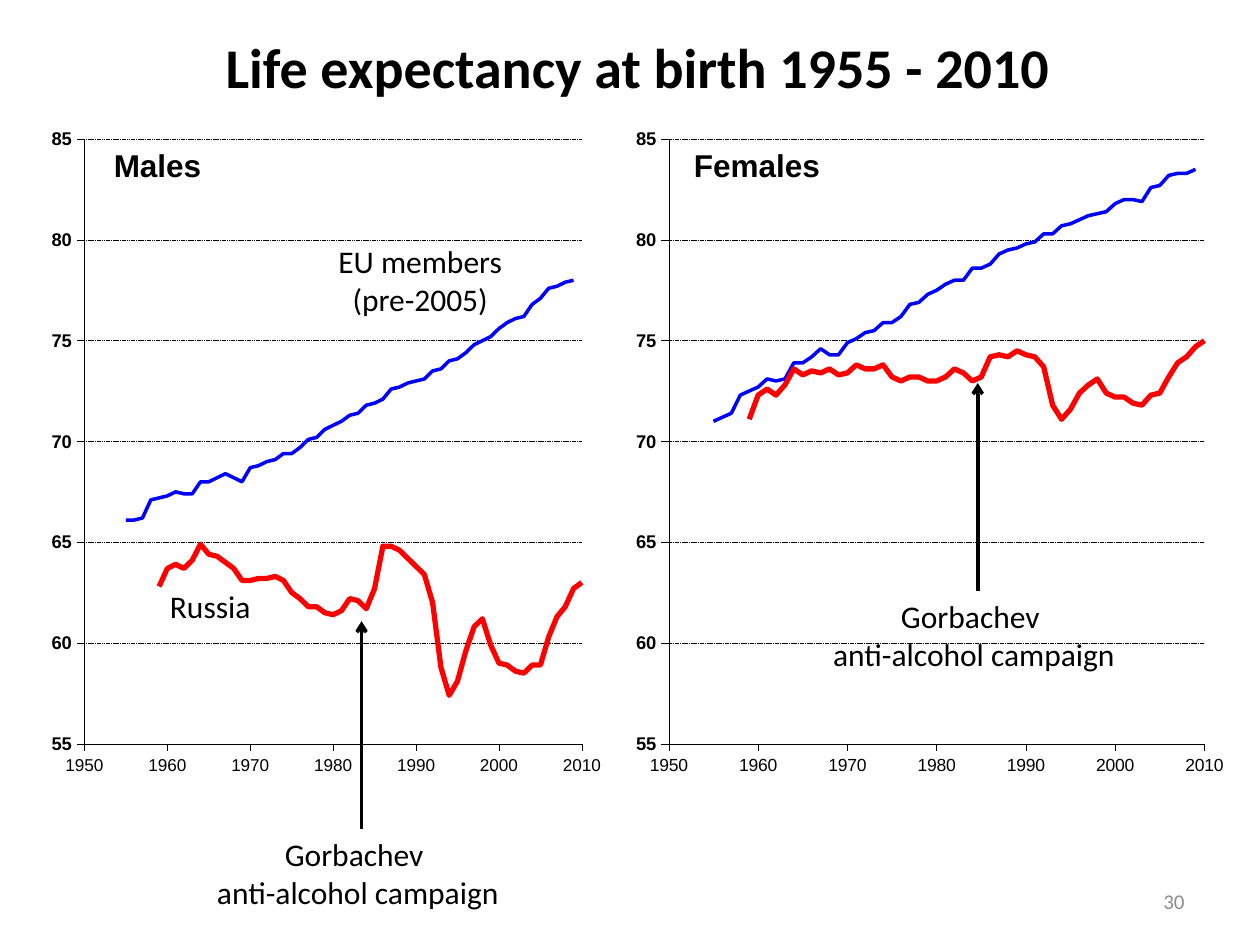
"""Build a slide comparing male and female life expectancy in Russia and the EU."""
from lxml import etree
from pptx import Presentation
from pptx.chart.data import XyChartData
from pptx.dml.color import RGBColor
from pptx.enum.chart import XL_CHART_TYPE, XL_TICK_MARK
from pptx.enum.dml import MSO_LINE
from pptx.enum.shapes import MSO_CONNECTOR
from pptx.enum.text import MSO_ANCHOR, MSO_AUTO_SIZE, PP_ALIGN
from pptx.oxml.ns import qn
from pptx.util import Inches, Pt

SCATTER = XL_CHART_TYPE.XY_SCATTER_LINES_NO_MARKERS
OUTSIDE = XL_TICK_MARK.OUTSIDE
NO_TICK = XL_TICK_MARK.NONE
DASH = MSO_LINE.SQUARE_DOT
STRAIGHT = MSO_CONNECTOR.STRAIGHT
MIDDLE, TOP = MSO_ANCHOR.MIDDLE, MSO_ANCHOR.TOP
NO_FIT = MSO_AUTO_SIZE.NONE
LEFT, CENTER, RIGHT = PP_ALIGN.LEFT, PP_ALIGN.CENTER, PP_ALIGN.RIGHT

COLORS = {"text": "000000", "number": "8C8C8C", "panel": "FFFFFF",
          "russia": "FF0000", "eu": "0000FF"}
WIDTHS = {"russia": 3, "eu": 2}
NAMES = {"russia": "Russia", "eu": "EU members"}
FIRST_YEARS = {"russia": 1959, "eu": 1955}
YEARS = range(1955, 2011)

MALES = {
    "russia": [
        62.8, 63.7, 63.9, 63.7, 64.1, 64.9, 64.4, 64.3, 64, 63.7, 63.1, 63.1, 63.2,
        63.2, 63.3, 63.1, 62.5, 62.2, 61.8, 61.8, 61.5, 61.4, 61.6, 62.2, 62.1, 61.7,
        62.7, 64.8, 64.8, 64.6, 64.2, 63.8, 63.4, 62, 58.8, 57.4, 58.1, 59.6, 60.8,
        61.2, 59.9, 59, 58.9, 58.6, 58.5, 58.9, 58.9, 60.3, 61.3, 61.8, 62.7, 63],
    "eu": [
        66.1, 66.1, 66.2, 67.1, 67.2, 67.3, 67.5, 67.4, 67.4, 68, 68, 68.2, 68.4, 68.2,
        68, 68.7, 68.8, 69, 69.1, 69.4, 69.4, 69.7, 70.1, 70.2, 70.6, 70.8, 71, 71.3,
        71.4, 71.8, 71.9, 72.1, 72.6, 72.7, 72.9, 73, 73.1, 73.5, 73.6, 74, 74.1, 74.4,
        74.8, 75, 75.2, 75.6, 75.9, 76.1, 76.2, 76.8, 77.1, 77.6, 77.7, 77.9, 78],
}
FEMALES = {
    "russia": [
        71.1, 72.3, 72.6, 72.3, 72.8, 73.6, 73.3, 73.5, 73.4, 73.6, 73.3, 73.4, 73.8,
        73.6, 73.6, 73.8, 73.2, 73, 73.2, 73.2, 73, 73, 73.2, 73.6, 73.4, 73, 73.2,
        74.2, 74.3, 74.2, 74.5, 74.3, 74.2, 73.7, 71.8, 71.1, 71.6, 72.4, 72.8, 73.1,
        72.4, 72.2, 72.2, 71.9, 71.8, 72.3, 72.4, 73.2, 73.9, 74.2, 74.7, 75],
    "eu": [
        71, 71.2, 71.4, 72.3, 72.5, 72.7, 73.1, 73, 73.1, 73.9, 73.9, 74.2, 74.6, 74.3,
        74.3, 74.9, 75.1, 75.4, 75.5, 75.9, 75.9, 76.2, 76.8, 76.9, 77.3, 77.5, 77.8,
        78, 78, 78.6, 78.6, 78.8, 79.3, 79.5, 79.6, 79.8, 79.9, 80.3, 80.3, 80.7, 80.8,
        81, 81.2, 81.3, 81.4, 81.8, 82, 82, 81.9, 82.6, 82.7, 83.2, 83.3, 83.3, 83.5],
}
CAMPAIGN = "Gorbachev \nanti-alcohol campaign"


def format_font(font, size, bold=False, color="text", name="Calibri"):
    """Set the typeface, size, weight and colour of a font."""
    font.name, font.size, font.bold = name, Pt(size), bold
    font.color.rgb = RGBColor.from_string(COLORS[color])


def format_line(line, color="text", width=0.25):
    """Set the colour and width of a line."""
    line.color.rgb = RGBColor.from_string(COLORS[color])
    line.width = Pt(width)


def write_text(text_frame, text, align=LEFT, anchor=TOP, wrap=False, **font):
    """Fill a text frame with one formatted paragraph per line of text."""
    text_frame.word_wrap = wrap
    text_frame.auto_size = NO_FIT
    text_frame.vertical_anchor = anchor
    text_frame.text = text
    for paragraph in text_frame.paragraphs:
        paragraph.alignment = align
        format_font(paragraph.runs[0].font, **font)


def add_title(slide, text, left, top, width, height):
    """Fill and place the title on a translucent panel."""
    title = slide.shapes.title
    title.left, title.top = Inches(left), Inches(top)
    title.width, title.height = Inches(width), Inches(height)
    title.fill.solid()
    title.fill.fore_color.rgb = RGBColor.from_string(COLORS["panel"])
    color = title._element.spPr.find(f".//{qn('a:srgbClr')}")
    etree.SubElement(color, qn("a:alpha"), val="80000")
    write_text(title.text_frame, text, size=32, bold=True)


def add_label(slide, text, left, top, width, height, size=18, **options):
    """Add a text box."""
    box = slide.shapes.add_textbox(*map(Inches, (left, top, width, height)))
    write_text(box.text_frame, text, size=size, **options)


def add_arrow_up(slide, x, bottom, top):
    """Add a vertical arrow that points up."""
    points = map(Inches, (x, bottom, x, top))
    connector = slide.shapes.add_connector(STRAIGHT, *points)
    format_line(connector.line, width=2)
    line = connector.line._get_or_add_ln()
    etree.SubElement(line, qn("a:tailEnd"), type="arrow")
    etree.SubElement(connector._element.spPr, qn("a:effectLst"))


def set_layout(parent, position, **values):
    """Give a chart part a manual layout in fractions of the chart."""
    layout = parent.find(qn("c:layout"))
    if layout is None:
        layout = etree.Element(qn("c:layout"))
        parent.insert(position, layout)
    manual = etree.SubElement(layout, qn("c:manualLayout"))
    for name, value in values.items():
        etree.SubElement(manual, qn(f"c:{name}"), val=str(value))


def format_axis(axis, low, high, step, size, bold=False):
    """Set the scale, ticks, labels and line of an axis."""
    axis.minimum_scale, axis.maximum_scale, axis.major_unit = low, high, step
    axis.major_tick_mark, axis.minor_tick_mark = OUTSIDE, NO_TICK
    axis.has_major_gridlines = False
    format_font(axis.tick_labels.font, size, bold, name="Arial")
    axis.tick_labels.number_format = "General"
    axis.tick_labels.number_format_is_linked = False
    format_line(axis.format.line)


def build_chart_data(groups):
    """Pair every year with a value, or None where a group has no figure."""
    data = XyChartData()
    for group, values in groups.items():
        by_year = dict(enumerate(values, FIRST_YEARS[group]))
        series = data.add_series(NAMES[group])
        for year in YEARS:
            series.add_data_point(year, by_year.get(year))
    return data


def add_life_chart(slide, heading, groups, left, width, year_size, heading_x):
    """Add a scatter chart of life expectancy by year."""
    area = map(Inches, (left, 0.94, width, 6.09))
    data = build_chart_data(groups)
    chart = slide.shapes.add_chart(SCATTER, *area, data).chart
    for point in list(chart._chartSpace.iter(qn("c:pt"))):
        if point.findtext(qn("c:v")) in ("None", ""):
            point.getparent().remove(point)
    chart.has_legend = False
    format_font(chart.font, 10.5, name="Arial")

    title = chart.chart_title
    title.text_frame.text = heading
    run = title.text_frame.paragraphs[0].runs[0]
    format_font(run.font, 18, bold=True, name="Arial")
    title._element.find(qn("c:overlay")).set("val", "1")
    set_layout(title._element, 1, xMode="edge", yMode="edge", x=heading_x, y=0.027)
    set_layout(chart._chartSpace.chart.plotArea, 0, layoutTarget="inner",
               xMode="edge", yMode="edge", x=0.079, y=0.027, w=0.864, h=0.788)

    format_axis(chart.category_axis, 1950, 2010, 10, year_size)
    format_axis(chart.value_axis, 55, 85, 5, 10.5, bold=True)
    gridline = chart.value_axis.major_gridlines.format.line
    format_line(gridline)
    gridline.dash_style = DASH

    for group, series in zip(groups, chart.plots[0].series):
        series.smooth = False
        format_line(series.format.line, group, WIDTHS[group])


def main():
    """Build and save the slide."""
    presentation = Presentation()
    presentation.slide_width, presentation.slide_height = Inches(10), Inches(7.5)
    slide = presentation.slides.add_slide(presentation.slide_layouts[5])

    add_title(slide, "Life expectancy at birth 1955 - 2010", 1.69, 0.21, 6.8, 0.64)
    add_life_chart(slide, "Females", FEMALES, 4.92, 4.92, 10, 0.11)
    add_life_chart(slide, "Males", MALES, 0.31, 4.57, 9.8, 0.12)

    add_label(slide, "Russia", 1.25, 4.61, 0.85, 0.4)
    add_label(slide, "EU members\n(pre-2005)", 2.58, 1.87, 1.51, 0.71, align=CENTER)
    add_label(slide, "30", 7.17, 6.95, 2.33, 0.4, size=12, color="number",
              align=RIGHT, anchor=MIDDLE, wrap=True)

    for arrow_x, label_left, top in ((2.87, 1.61, 6.58), (7.76, 6.5, 4.69)):
        add_arrow_up(slide, arrow_x, top, top - 1.65)
        add_label(slide, CAMPAIGN, label_left, top, 2.46, 0.71, align=CENTER)

    presentation.save("out.pptx")


if __name__ == "__main__":
    main()
